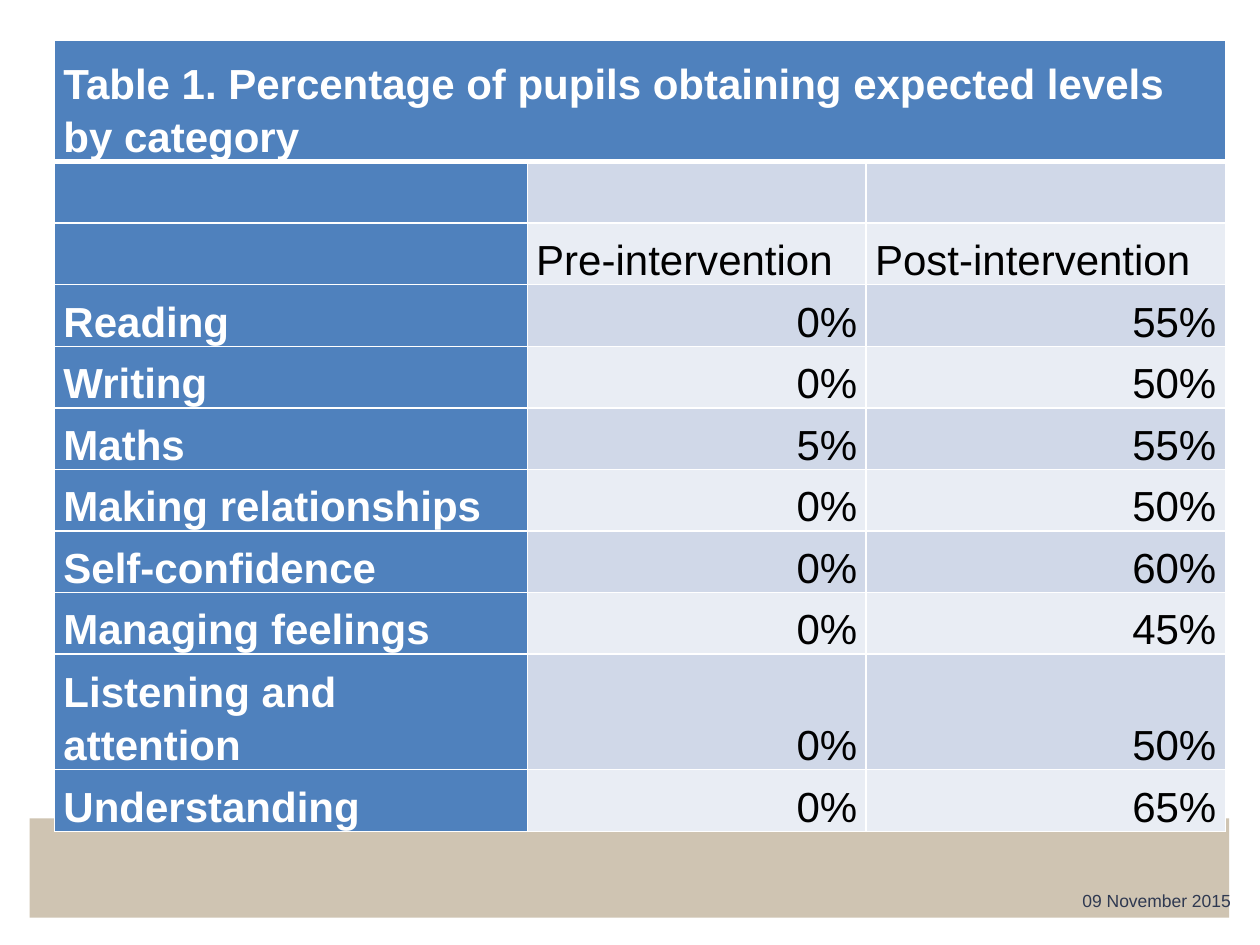
import lxml.etree
import pptx
import pptx.dml.color
import pptx.enum.shapes
import pptx.enum.text
import pptx.oxml.ns
import pptx.util
from pptx.util import Cm, Pt

ALIGN = pptx.enum.text.PP_ALIGN
ANCHOR = pptx.enum.text.MSO_ANCHOR
HEADER_FILL = "4F81BD"
BAND_FILLS = ("D0D8E8", "E9EDF4")
COLUMN_WIDTHS = (9.53, 6.83, 7.24)
TITLE_HEIGHT, ROW_HEIGHT = 2.44, 1.24
TITLE = "Table 1. Percentage of pupils obtaining expected levels by category"
ROWS = [
    ("", "", ""),
    ("", "Pre-intervention", "Post-intervention"),
    ("Reading", "0%", "55%"),
    ("Writing", "0%", "50%"),
    ("Maths", "5%", "55%"),
    ("Making relationships", "0%", "50%"),
    ("Self-confidence", "0%", "60%"),
    ("Managing feelings", "0%", "45%"),
    ("Listening and attention", "0%", "50%"),
    ("Understanding", "0%", "65%"),
]


def rgb(value):
    return pptx.dml.color.RGBColor.from_string(value)


def set_all(target, values):
    for name, value in values.items():
        setattr(target, name, value)


def paint(fill, color):
    fill.solid()
    fill.fore_color.rgb = rgb(color)


def style_font(font, size, color, bold=False):
    set_all(font, {"name": "Arial", "size": Pt(size), "bold": bold})
    font.color.rgb = rgb(color)


def set_borders(cell, widths):
    """Draw white borders, with widths in points keyed by L, R, T and B."""
    properties = cell._tc.get_or_add_tcPr()
    for side, width in widths.items():
        line = lxml.etree.SubElement(
            properties, pptx.oxml.ns.qn(f"a:ln{side}"), w=str(Pt(width)))
        fill = lxml.etree.SubElement(line, pptx.oxml.ns.qn("a:solidFill"))
        lxml.etree.SubElement(fill, pptx.oxml.ns.qn("a:srgbClr"), val="FFFFFF")


def style_cell(cell, text, row, column):
    is_header = row == 0 or column == 0
    set_borders(cell, {"L": 1, "R": 1, "T": 3 if row == 1 else 1,
                       "B": 3 if row == 0 else 1})
    paint(cell.fill, HEADER_FILL if is_header else BAND_FILLS[(row - 1) % 2])
    set_all(cell, {"margin_left": Cm(0.18), "margin_right": Cm(0.18),
                   "margin_top": 0, "margin_bottom": 0,
                   "vertical_anchor": ANCHOR.BOTTOM})
    cell.text = text
    paragraph = cell.text_frame.paragraphs[0]
    set_all(paragraph, {
        "line_spacing": 1.15,
        "alignment": ALIGN.RIGHT if text.endswith("%") else ALIGN.LEFT})
    style_font(paragraph.font, 24, "FFFFFF" if is_header else "000000", is_header)


def add_results_table(slide, left, top):
    heights = [TITLE_HEIGHT] + [ROW_HEIGHT] * len(ROWS)
    table = slide.shapes.add_table(
        len(heights), len(COLUMN_WIDTHS), Cm(left), Cm(top),
        Cm(sum(COLUMN_WIDTHS)), Cm(sum(heights))).table
    set_all(table, {"first_col": True})
    for column, width in zip(table.columns, COLUMN_WIDTHS):
        column.width = Cm(width)
    for row, height in zip(table.rows, heights):
        row.height = Cm(height)
    for row, texts in enumerate([(TITLE, "", "")] + ROWS):
        for column, text in enumerate(texts):
            style_cell(table.cell(row, column), text, row, column)
    table.cell(0, 0).merge(table.cell(0, len(COLUMN_WIDTHS) - 1))


def add_footer(slide, left, top, width, height):
    band = slide.shapes.add_shape(
        pptx.enum.shapes.MSO_SHAPE.RECTANGLE,
        Cm(left), Cm(top), Cm(width), Cm(height))
    band.shadow.inherit = False
    paint(band.fill, "CFC4B2")
    band.line.fill.background()

    date_width, date_height = 3, 0.56
    date = slide.shapes.add_textbox(
        Cm(left + width - date_width + 0.03), Cm(top + 1.45),
        Cm(date_width), Cm(date_height))
    frame = date.text_frame
    set_all(frame, {"word_wrap": True, "margin_left": 0, "margin_right": 0,
                    "margin_top": 0, "margin_bottom": 0})
    frame.text = "09 November 2015"
    paragraph = frame.paragraphs[0]
    paragraph.alignment = ALIGN.RIGHT
    style_font(paragraph.font, 10, "2F3951")


def main():
    presentation = pptx.Presentation()
    set_all(presentation, {"slide_width": Cm(25.4), "slide_height": Cm(19.05)})
    slide = presentation.slides.add_slide(presentation.slide_layouts[6])
    add_footer(slide, 0.6, 16.5, 24.18, 2)
    add_results_table(slide, 1.1, 0.82)
    presentation.save("out.pptx")


if __name__ == "__main__":
    main()
